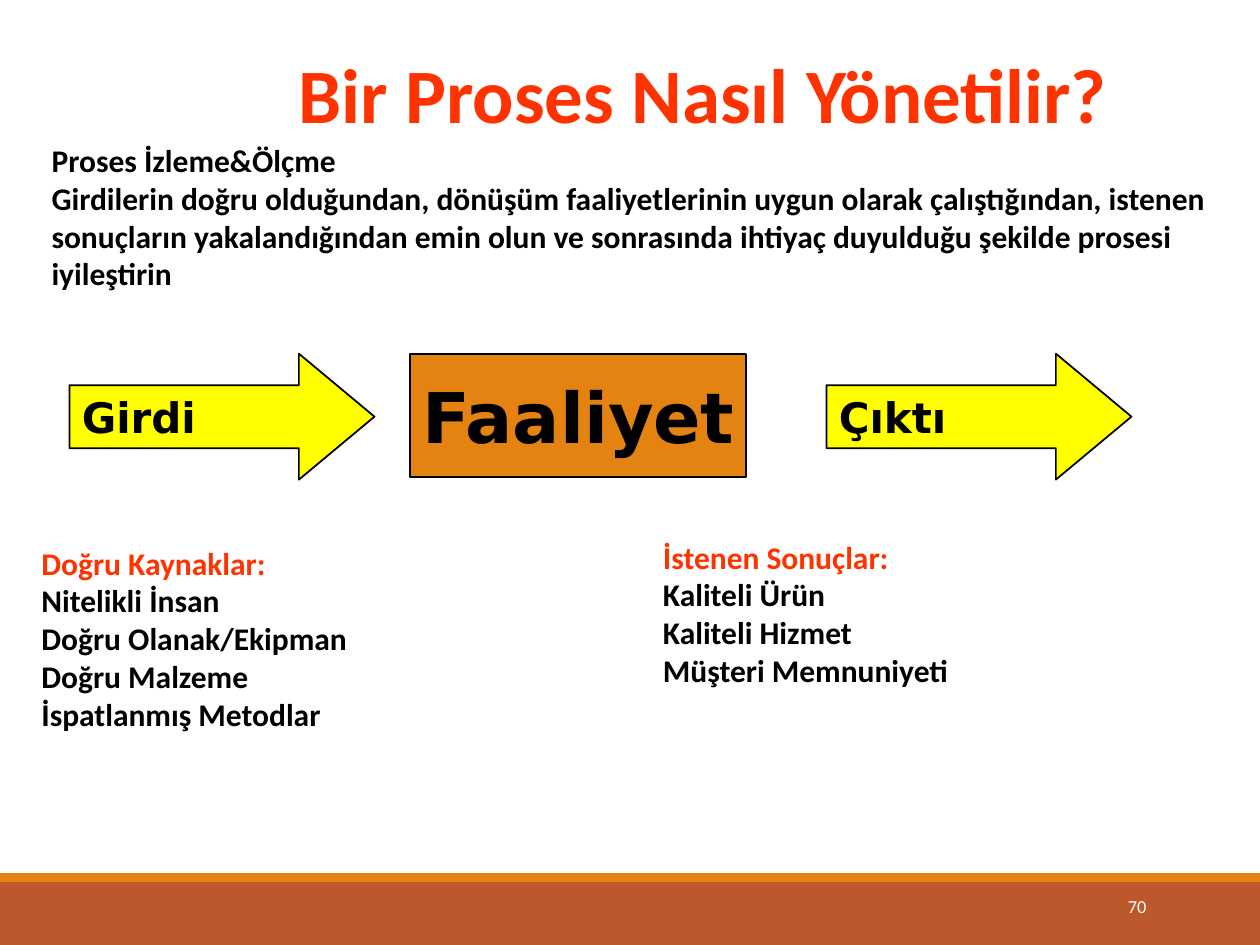
import pptx
import pptx.util
import pptx.dml.color
import pptx.enum.shapes
import pptx.enum.text
from dataclasses import dataclass
from lxml import etree

Cm, Pt = pptx.util.Cm, pptx.util.Pt
RGB = pptx.dml.color.RGBColor.from_string
Kind = pptx.enum.shapes.MSO_SHAPE
Anchor = pptx.enum.text.MSO_ANCHOR
Align = pptx.enum.text.PP_ALIGN
Fit = pptx.enum.text.MSO_AUTO_SIZE


@dataclass(frozen=True)
class Theme:
    body: str = "Calibri"
    label: str = "DejaVu Sans"
    red: str = "FF3300"
    ink: str = "000000"
    white: str = "FFFFFF"
    yellow: str = "FFFF00"
    orange: str = "E48312"
    rust: str = "BD582C"
    title: float = 44
    big: float = 40
    mid: float = 24
    text: float = 18
    small: float = 10.5


theme = Theme()


def place(shape, box):
    shape.left, shape.top, shape.width, shape.height = map(Cm, box)


def write(shape, lines, size, colors, face=theme.body, bold=True,
          align=Align.LEFT, anchor=Anchor.MIDDLE, wrap=True):
    """Fill a shape with lines; the last colour serves all remaining lines."""
    frame = shape.text_frame
    frame.text = "\n".join(lines)
    frame.auto_size = Fit.NONE
    frame.word_wrap = wrap
    frame.vertical_anchor = anchor
    for i, para in enumerate(frame.paragraphs):
        para.alignment = align
        para.space_before = Pt(0)
        if shape.is_placeholder:
            props = para._p.get_or_add_pPr()
            props.set("marL", "0")
            props.set("indent", "0")
            etree.SubElement(props, pptx.oxml.ns.qn("a:buNone"))
        font = para.font
        font.name, font.size, font.bold = face, Pt(size), bold
        font.color.rgb = RGB(colors[min(i, len(colors) - 1)])


def block(slide, kind, box, fill, line=None):
    shape = slide.shapes.add_shape(kind, *map(Cm, box))
    shape.shadow.inherit = False
    shape.fill.solid()
    shape.fill.fore_color.rgb = RGB(fill)
    if line:
        shape.line.color.rgb = RGB(line)
        shape.line.width = Pt(1)
    else:
        shape.line.fill.background()
    return shape


def footer(slide, box, number):
    x, y, w, h = box
    strip = 0.18
    block(slide, Kind.RECTANGLE, (x, y + strip, w, h - strip), theme.rust)
    block(slide, Kind.RECTANGLE, (x, y, w, strip), theme.orange)
    page = slide.shapes.add_textbox(*map(Cm, (x + 20.62, y + 0.33, 2.74, 1.02)))
    write(page, [number], theme.small, [theme.white], bold=False,
          align=Align.RIGHT, anchor=Anchor.TOP)


def heading(slide, box, text):
    place(slide.shapes.title, box)
    write(slide.shapes.title, [text], theme.title, [theme.red])


def intro(slide, box, lines):
    shape = slide.shapes.add_textbox(*map(Cm, box))
    write(shape, lines, theme.text, [theme.ink], anchor=Anchor.TOP)


def flow(slide, box, start, step, end):
    """Input arrow, activity box and output arrow."""
    x, y, w, h = box
    wide = 6.15
    for left, text in ((x, start), (x + w - wide, end)):
        arrow = block(slide, Kind.RIGHT_ARROW, (left, y, wide, h),
                      theme.yellow, theme.ink)
        arrow.adjustments[0] = 0.5
        arrow.adjustments[1] = 0.6
        write(arrow, [text], theme.mid, [theme.ink], theme.label, wrap=False)
    task = block(slide, Kind.RECTANGLE, (x + 6.86, y, 6.78, h - 0.05),
                 theme.orange, theme.ink)
    write(task, [step], theme.big, [theme.ink], theme.label, wrap=False)


def column(holder, box, lines):
    place(holder, box)
    write(holder, lines, theme.text, [theme.red, theme.ink])


def main():
    deck = pptx.Presentation()
    deck.slide_width, deck.slide_height = Cm(25.4), Cm(19.05)
    slide = deck.slides.add_slide(deck.slide_layouts[3])

    footer(slide, (0, 17.6, 25.4, 1.45), "70")
    heading(slide, (5.77, 0.58, 19, 2.59), "Bir Proses Nasıl Yönetilir?")
    intro(slide, (0.79, 2.72, 24, 6.25), [
        "Proses İzleme&Ölçme",
        "Girdilerin doğru olduğundan, dönüşüm faaliyetlerinin uygun olarak "
        "çalıştığından, istenen sonuçların yakalandığından emin olun ve "
        "sonrasında ihtiyaç duyulduğu şekilde prosesi iyileştirin",
    ])
    flow(slide, (1.4, 7.13, 21.41, 2.54), "Girdi", "Faaliyet", "Çıktı")

    # Resources on the left, results on the right
    column(slide.placeholders[1], (0.58, 10.11, 12.29, 5.51), [
        "Doğru Kaynaklar:", "Nitelikli İnsan", "Doğru Olanak/Ekipman",
        "Doğru Malzeme", "İspatlanmış Metodlar"])
    column(slide.placeholders[2], (13.11, 10.11, 11.68, 4.5), [
        "İstenen Sonuçlar:", "Kaliteli Ürün", "Kaliteli Hizmet",
        "Müşteri Memnuniyeti"])

    deck.save("out.pptx")


if __name__ == "__main__":
    main()
